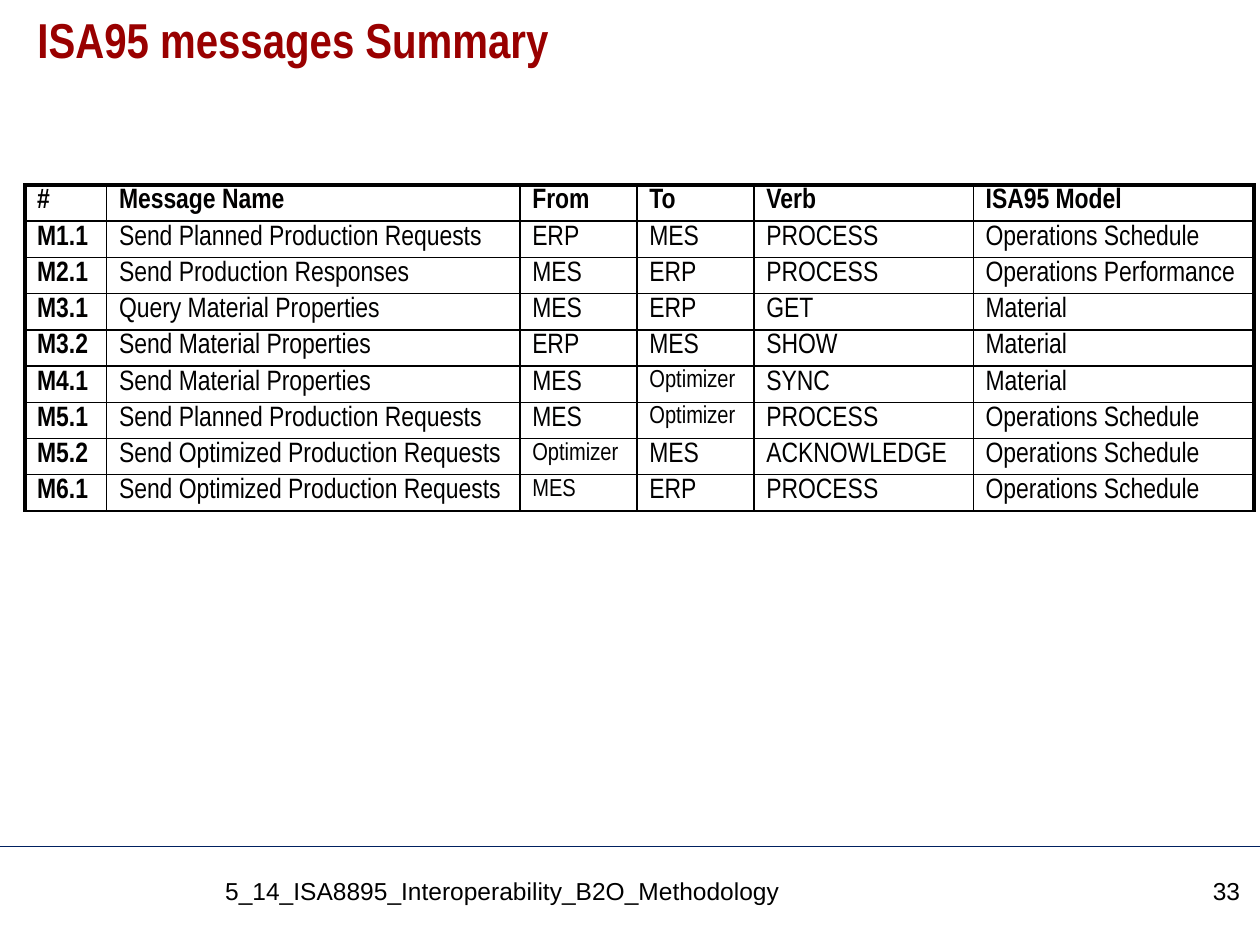
from lxml.etree import SubElement
from pptx import Presentation
from pptx.dml.color import RGBColor
from pptx.enum.shapes import MSO_CONNECTOR
from pptx.enum.text import MSO_ANCHOR, MSO_AUTO_SIZE, PP_ALIGN
from pptx.oxml.ns import qn
from pptx.util import Cm, Pt

BLACK = RGBColor(0x00, 0x00, 0x00)
INK = RGBColor(0x01, 0x00, 0x00)
DARK_RED = RGBColor(0x99, 0x00, 0x00)
NAVY = RGBColor(0x00, 0x20, 0x60)
NARROW = "Arial Narrow"
THIN, THICK = Pt(1), Pt(2.25)

COLUMN_WIDTHS = (1.65, 8.33, 2.36, 2.36, 4.42, 5.66)
ROW_HEIGHT = 0.73
MESSAGES = (
    ("#", "Message Name", "From", "To", "Verb", "ISA95 Model"),
    ("M1.1", "Send Planned Production Requests", "ERP", "MES", "PROCESS", "Operations Schedule"),
    ("M2.1", "Send Production Responses", "MES", "ERP", "PROCESS", "Operations Performance"),
    ("M3.1", "Query Material Properties", "MES", "ERP", "GET", "Material"),
    ("M3.2", "Send Material Properties", "ERP", "MES", "SHOW", "Material"),
    ("M4.1", "Send Material Properties", "MES", "Optimizer", "SYNC", "Material"),
    ("M5.1", "Send Planned Production Requests", "MES", "Optimizer", "PROCESS", "Operations Schedule"),
    ("M5.2", "Send Optimized Production Requests", "Optimizer", "MES", "ACKNOWLEDGE", "Operations Schedule"),
    ("M6.1", "Send Optimized Production Requests", "MES", "ERP", "PROCESS", "Operations Schedule"),
)
SMALL_CELLS = {(5, 3), (6, 3), (7, 2), (8, 2)}


def add_span(para, text, size, font_name, color, bold=False):
    """Add one formatted run to a paragraph."""
    span = para.add_run()
    span.text = text
    font = span.font
    font.size, font.name, font.bold = Pt(size), font_name, bold
    font.color.rgb = color


def set_borders(cell, left, right, top, bottom):
    """Draw the four black borders of a cell, ahead of its fill."""
    properties = cell._tc.get_or_add_tcPr()
    for side, width in (("L", left), ("R", right), ("T", top), ("B", bottom)):
        border = SubElement(properties, qn(f"a:ln{side}"), w=str(width))
        fill = SubElement(border, qn("a:solidFill"))
        SubElement(fill, qn("a:srgbClr"), val=str(BLACK))


def place_title(page, left, top, width, height):
    """Place the slide title in its placeholder."""
    title = page.shapes.title
    title.left, title.top, title.width, title.height = left, top, width, height
    frame = title.text_frame
    frame.auto_size = MSO_AUTO_SIZE.NONE
    frame.vertical_anchor = MSO_ANCHOR.TOP
    para = frame.paragraphs[0]
    para.alignment = PP_ALIGN.LEFT
    para.line_spacing = 0.9
    add_span(para, "ISA95 messages Summary", 28, NARROW, DARK_RED, True)


def fill_cell(cell, text, size, bold):
    """Write one table cell without a background."""
    cell.fill.background()
    cell.margin_left = cell.margin_right = Cm(0.25)
    cell.margin_top, cell.margin_bottom = Cm(0.1), Cm(0)
    cell.vertical_anchor = MSO_ANCHOR.TOP
    para = cell.text_frame.paragraphs[0]
    para.line_spacing = 0.9
    add_span(para, text, size, NARROW, INK, bold)


def place_messages(page, left, top):
    """Place the table of messages with a heavy left, top and right edge."""
    last = len(COLUMN_WIDTHS) - 1
    table = page.shapes.add_table(
        len(MESSAGES), len(COLUMN_WIDTHS), left, top,
        Cm(sum(COLUMN_WIDTHS)), Cm(ROW_HEIGHT * len(MESSAGES)),
    ).table
    table.horz_banding = False
    for column, width in zip(table.columns, COLUMN_WIDTHS):
        column.width = Cm(width)
    for row_index, message in enumerate(MESSAGES):
        table.rows[row_index].height = Cm(ROW_HEIGHT)
        for column_index, text in enumerate(message):
            cell = table.cell(row_index, column_index)
            set_borders(
                cell,
                THICK if column_index == 0 else THIN,
                THICK if column_index == last else THIN,
                THICK if row_index == 0 else THIN,
                THIN,
            )
            size = 14 if (row_index, column_index) in SMALL_CELLS else 16
            fill_cell(cell, text, size, row_index == 0 or column_index == 0)


def place_footer(page, left, top, width):
    """Place the footer rule, document name and page number."""
    rule = page.shapes.add_connector(MSO_CONNECTOR.STRAIGHT, left, top, left + width, top)
    rule.line.color.rgb = NAVY
    rule.line.width = Pt(0.75)
    SubElement(rule._element.spPr, qn("a:effectLst"))
    labels = (
        (4.29, 18.31, PP_ALIGN.LEFT, "5_14_ISA8895_Interoperability_B2O_Methodology"),
        (22.91, 2.34, PP_ALIGN.RIGHT, "33"),
    )
    for offset, label_width, alignment, text in labels:
        box = page.shapes.add_textbox(left + Cm(offset), top + Cm(0.46), Cm(label_width), Cm(1.14))
        box.text_frame.word_wrap = True
        para = box.text_frame.paragraphs[0]
        para.alignment = alignment
        add_span(para, text, 14, "Arial", BLACK)


def main():
    """Build the deck and save it."""
    deck = Presentation()
    deck.slide_width, deck.slide_height = Cm(25.4), Cm(19.05)
    page = deck.slides.add_slide(deck.slide_layouts[5])
    place_footer(page, Cm(0), Cm(17.07), deck.slide_width)
    place_title(page, Cm(0.5), Cm(0.2), Cm(24.4), Cm(2.1))
    place_messages(page, Cm(0.5), Cm(3.73))
    deck.save("out.pptx")


if __name__ == "__main__":
    main()
